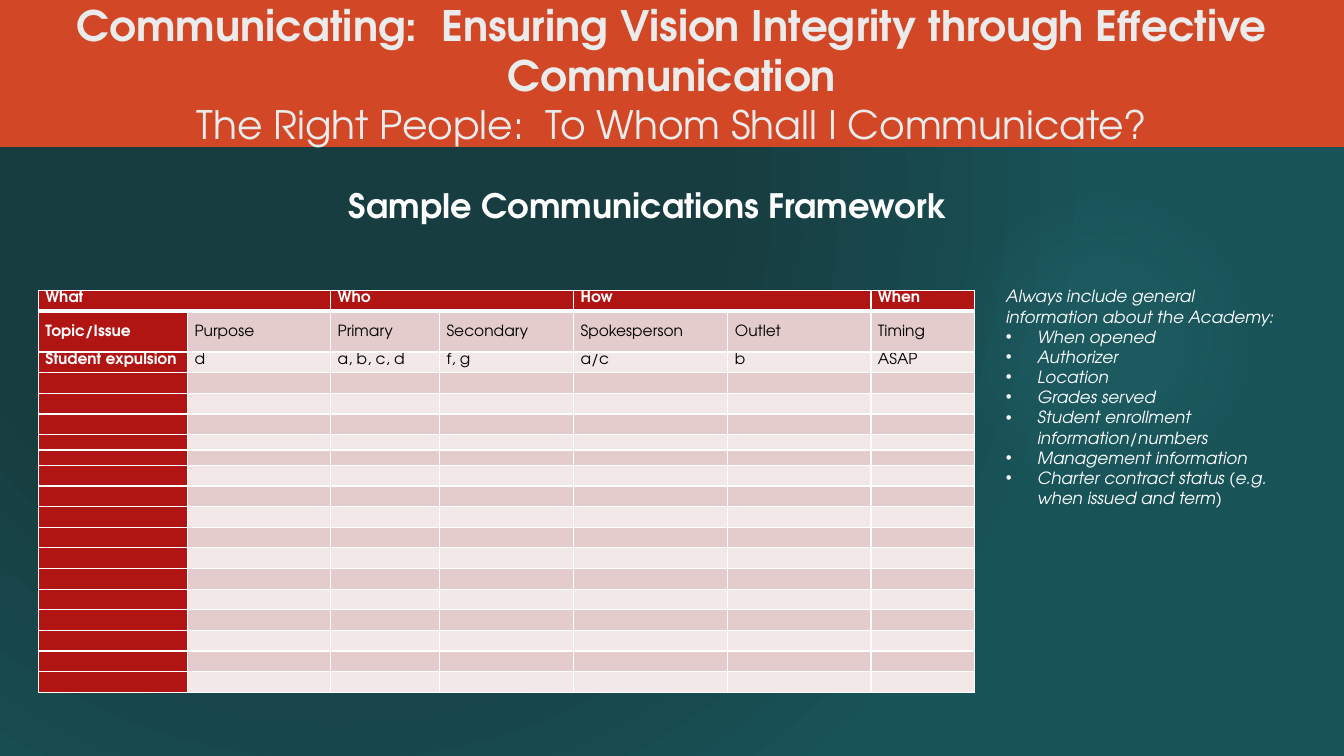
from dataclasses import dataclass

from lxml.etree import SubElement
from pptx import Presentation
from pptx.dml.color import RGBColor
from pptx.dml.fill import FillFormat
from pptx.enum.shapes import MSO_SHAPE
from pptx.enum.text import MSO_ANCHOR, PP_ALIGN
from pptx.oxml.ns import qn
from pptx.slide import Slide
from pptx.table import _Cell
from pptx.text.text import TextFrame, _Paragraph, _Run
from pptx.util import Pt

FONT = "TeX Gyre Adventor"
WHITE = RGBColor(0xFF, 0xFF, 0xFF)
BLACK = RGBColor(0x00, 0x00, 0x00)
PALE = RGBColor(0xEB, 0xEB, 0xEB)
ORANGE = RGBColor(0xD2, 0x47, 0x26)
RED = RGBColor(0xB0, 0x15, 0x13)
BAND_DARK = RGBColor(0xE4, 0xCC, 0xCC)
BAND_LIGHT = RGBColor(0xF2, 0xE8, 0xE7)
TEAL_DARK = RGBColor(0x17, 0x3D, 0x40)
TEAL = RGBColor(0x18, 0x53, 0x58)
GLOW = RGBColor(0x50, 0xB9, 0xC1)

COLUMN_WIDTHS = [106.6, 102.2, 77.8, 95.8, 110.2, 102.2, 74.2]
ROW_HEIGHTS = [14.75, 29.3] + [14.75] * 4 + [11] * 2 + [14.75] * 11
TABLE_TEXT = [
    ["What", "", "Who", "", "How", "", "When"],
    ["Topic/Issue", "Purpose", "Primary", "Secondary", "Spokesperson", "Outlet", "Timing"],
    ["Student expulsion", "d", "a, b, c, d", "f, g", "a/c", "b", "ASAP"],
]
ACADEMY_INTRO = "Always include general information about the Academy:"
ACADEMY_FACTS = [
    "When opened",
    "Authorizer",
    "Location",
    "Grades served",
    "Student enrollment information/numbers",
    "Management information",
    "Charter contract status (e.g. when issued and term",
]


@dataclass
class Stop:
    """A gradient stop: position and opacity in percent."""

    position: int
    color: RGBColor
    opacity: int = 100


@dataclass
class Style:
    """The look of a run of text."""

    size: float
    color: RGBColor
    bold: bool = False
    italic: bool = False


def fill_radial(fill: FillFormat, stops: list[Stop], parent, right: int, bottom: int) -> None:
    """Give a fill a circular gradient."""
    fill.gradient()
    gradient = next(parent.iter(qn("a:gradFill")))
    for child in list(gradient):
        gradient.remove(child)
    stop_list = SubElement(gradient, qn("a:gsLst"))
    for stop in stops:
        node = SubElement(stop_list, qn("a:gs"), pos=str(stop.position * 1000))
        color = SubElement(node, qn("a:srgbClr"), val=str(stop.color))
        if stop.opacity < 100:
            SubElement(color, qn("a:alpha"), val=str(stop.opacity * 1000))
    circle = SubElement(gradient, qn("a:path"), {"path": "circle"})
    SubElement(circle, qn("a:fillToRect"), l="50000", t="50000",
               r=str(right * 1000), b=str(bottom * 1000))


def style_run(run: _Run, style: Style) -> None:
    """Apply a style to a run."""
    run.font.name = FONT
    run.font.size = Pt(style.size)
    run.font.color.rgb = style.color
    run.font.bold = style.bold
    run.font.italic = style.italic


def write(para: _Paragraph, text: str, style: Style) -> None:
    """Fill a paragraph with styled text."""
    para.text = text
    for run in para.runs:
        style_run(run, style)


def add_bullet(para: _Paragraph) -> None:
    """Turn a paragraph into a hanging bullet."""
    properties = para._p.get_or_add_pPr()
    properties.set("marL", str(Pt(22.5)))
    properties.set("indent", str(-Pt(22.5)))
    SubElement(properties, qn("a:buFont"), typeface="Arial")
    SubElement(properties, qn("a:buChar"), char="•")


def add_backdrop(page: Slide) -> None:
    """Draw the teal background, its glow and the orange banner."""
    fill_radial(page.background.fill, [Stop(48, TEAL_DARK), Stop(100, TEAL)],
                page._element, 100, 100)
    glow = page.shapes.add_shape(MSO_SHAPE.OVAL, Pt(677.5), Pt(131.8), Pt(221.8), Pt(221.8))
    fill_radial(glow.fill, [Stop(0, GLOW, 7), Stop(36, GLOW, 6), Stop(69, GLOW, 0)],
                glow._element, 50, 50)
    banner = page.shapes.add_shape(MSO_SHAPE.RECTANGLE, 0, 0, Pt(960), Pt(105))
    banner.fill.solid()
    banner.fill.fore_color.rgb = ORANGE
    for shape in (glow, banner):
        shape.line.fill.background()
        shape.shadow.inherit = False


def add_title(page: Slide) -> None:
    """Place and format the title over the banner."""
    title = page.shapes.title
    title.left, title.top, title.width, title.height = 0, Pt(-5), Pt(960), Pt(110)
    page.shapes._spTree.append(title._element)
    frame = title.text_frame
    frame.margin_top = frame.margin_bottom = 0
    frame.vertical_anchor = MSO_ANCHOR.BOTTOM
    para = frame.paragraphs[0]
    write(para, "Communicating:  Ensuring Vision Integrity through Effective Communication\v"
          "The Right People:  To Whom Shall I Communicate?", Style(30, PALE, bold=True))
    para.alignment = PP_ALIGN.CENTER
    style_run(para.runs[1], Style(28, PALE))


def format_cell(cell: _Cell, text: str, row: int, column: int) -> None:
    """Set the borders, fill and text of one table cell."""
    is_header = row == 0 or column == 0
    properties = cell._tc.get_or_add_tcPr()
    for side in ("lnL", "lnR", "lnT", "lnB"):
        is_thick = (row, side) in ((0, "lnB"), (1, "lnT"))
        line = SubElement(properties, qn(f"a:{side}"), w=str(Pt(3 if is_thick else 1)))
        solid = SubElement(line, qn("a:solidFill"))
        SubElement(solid, qn("a:srgbClr"), val=str(WHITE))
    cell.fill.solid()
    cell.fill.fore_color.rgb = RED if is_header else BAND_DARK if row % 2 else BAND_LIGHT
    cell.margin_left = cell.margin_right = Pt(5)
    cell.margin_top = cell.margin_bottom = 0
    cell.vertical_anchor = MSO_ANCHOR.MIDDLE if row == 1 else MSO_ANCHOR.TOP
    para = cell.text_frame.paragraphs[0]
    if text:
        write(para, text, Style(11, WHITE if is_header else BLACK, bold=is_header))
        para.line_spacing = 1.07
    else:
        SubElement(para._p, qn("a:endParaRPr"), sz="600")


def add_framework_table(page: Slide) -> None:
    """Draw the communications framework table."""
    frame = page.shapes.add_table(len(ROW_HEIGHTS), len(COLUMN_WIDTHS), Pt(27.4), Pt(207.4),
                                  Pt(sum(COLUMN_WIDTHS)), Pt(sum(ROW_HEIGHTS)))
    table = frame.table
    for column, width in zip(table.columns, COLUMN_WIDTHS):
        column.width = Pt(width)
    for index, height in enumerate(ROW_HEIGHTS):
        table.rows[index].height = Pt(height)
        for column in range(len(COLUMN_WIDTHS)):
            text = TABLE_TEXT[index][column] if index < len(TABLE_TEXT) else ""
            format_cell(table.cell(index, column), text, index, column)
    for column in (0, 2, 4):
        table.cell(0, column).merge(table.cell(0, column + 1))


def add_text_box(page: Slide, left: float, top: float, width: float, height: float) -> TextFrame:
    """Add a wrapping text box and return its text frame."""
    box = page.shapes.add_textbox(Pt(left), Pt(top), Pt(width), Pt(height))
    box.text_frame.word_wrap = True
    return box.text_frame


def add_notes(page: Slide) -> None:
    """Write the academy checklist and the table heading."""
    italic = Style(12, WHITE, italic=True)
    checklist = add_text_box(page, 711.4, 200.9, 213, 181.4)
    write(checklist.paragraphs[0], ACADEMY_INTRO, italic)
    for fact in ACADEMY_FACTS:
        para = checklist.add_paragraph()
        add_bullet(para)
        write(para, fact, italic)
    closing = para.add_run()
    closing.text = ")"
    style_run(closing, Style(12, WHITE))
    heading = add_text_box(page, 126, 128.2, 673.2, 36).paragraphs[0]
    write(heading, "Sample Communications Framework", Style(24, WHITE, bold=True))
    heading.alignment = PP_ALIGN.CENTER


def main() -> None:
    """Build the slide and save the deck."""
    deck = Presentation()
    deck.slide_width, deck.slide_height = Pt(960), Pt(540)
    page = deck.slides.add_slide(deck.slide_layouts[5])
    add_backdrop(page)
    add_title(page)
    add_framework_table(page)
    add_notes(page)
    deck.save("out.pptx")


if __name__ == "__main__":
    main()
